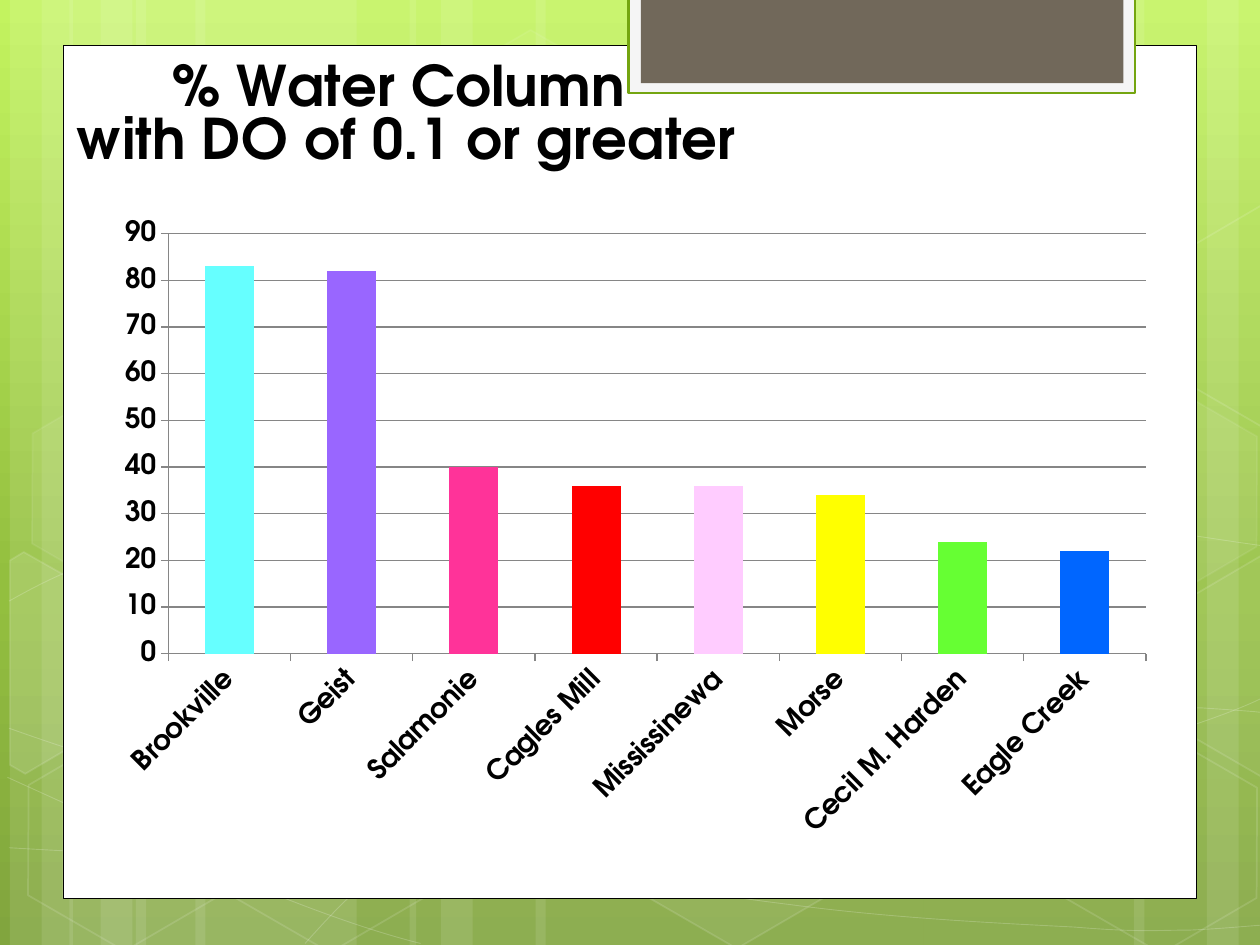
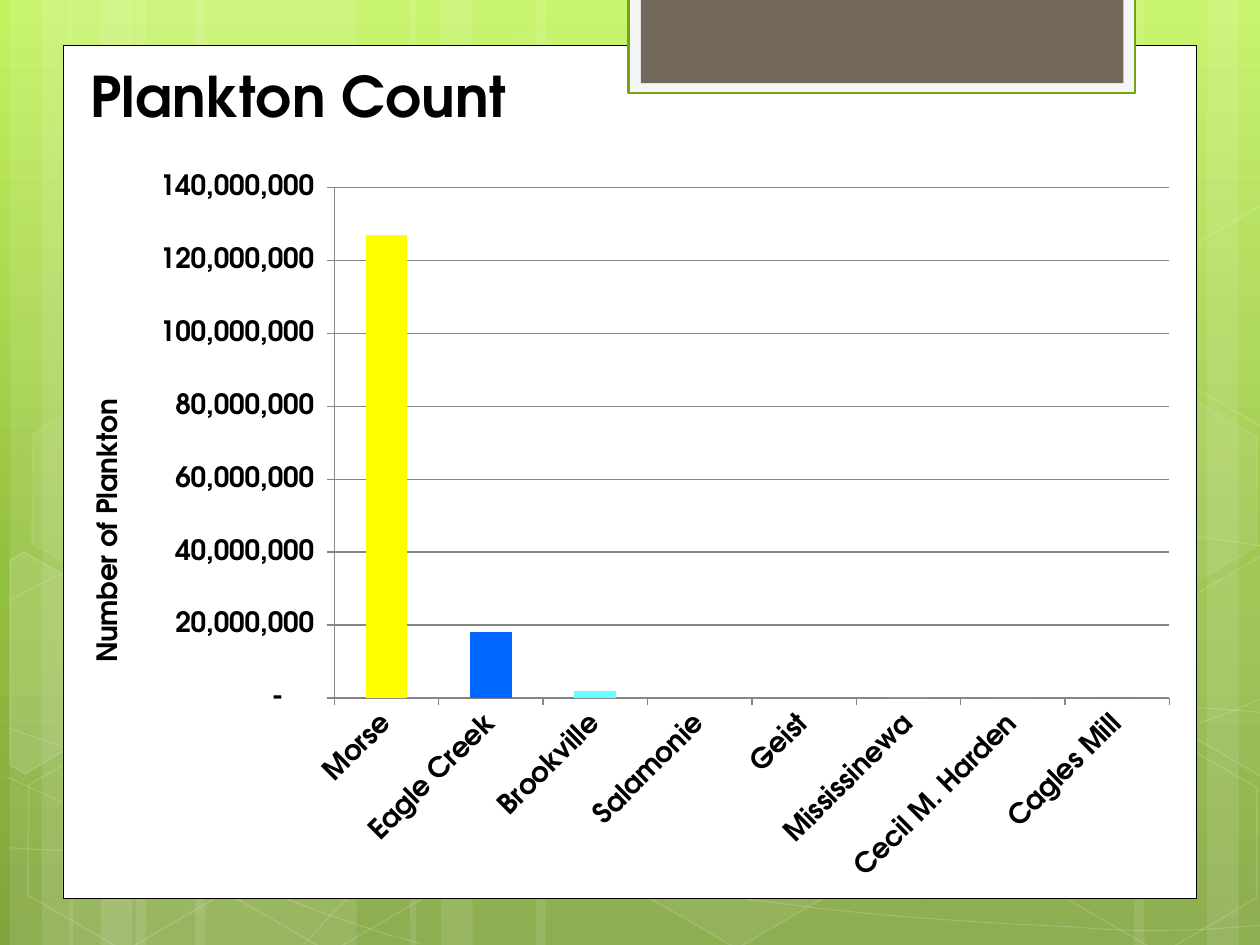
from copy import deepcopy

from lxml.etree import SubElement
from pptx import Presentation
from pptx.chart.data import CategoryChartData
from pptx.dml.color import RGBColor
from pptx.enum.chart import XL_CHART_TYPE, XL_TICK_MARK
from pptx.enum.shapes import MSO_SHAPE
from pptx.oxml import parse_xml
from pptx.oxml.ns import nsdecls, qn
from pptx.util import Cm, Pt

FONT = "TeX Gyre Adventor"
COLORS = {
    "white": "FFFFFF", "black": "000000", "grid": "868686", "series": "94C600",
    "frame": "F5F5F5", "frame_line": "74A510", "tab": "71685A",
}
BACKGROUND = [(0, "C3F35F"), (0.62, "93BF3F"), (1, "81A53E")]
LAKES = {
    "Brookville": "66FFFF", "Geist": "9966FF", "Salamonie": "FF3399",
    "Cagles Mill": "FF0000", "Mississinewa": "FFCCFF", "Morse": "FFFF00",
    "Cecil M. Harden": "66FF33", "Eagle Creek": "0066FF",
}
CHARTS = [
    {
        "title": "% Water Column \nwith DO of 0.1 or greater",
        "title_percent": (0.9, 1.2),
        "box": (1.27, 0.97, 22.86, 17.15),
        "plot_percent": (9.3, 21.8, 86.2, 49.4),
        "values": {
            "Brookville": 83, "Geist": 82, "Salamonie": 40, "Cagles Mill": 36,
            "Mississinewa": 36, "Morse": 34, "Cecil M. Harden": 24, "Eagle Creek": 22,
        },
        "scale": {"minimum_scale": 0, "maximum_scale": 90, "major_unit": 10},
        "format": "0",
    },
    {
        "title": "Plankton Count",
        "title_percent": (1.1, 1.2),
        "box": (1.37, 0.97, 22.66, 17.15),
        "plot_percent": (23.7, 16.4, 74.3, 60),
        "values": {
            "Morse": 127000000, "Eagle Creek": 18000000, "Brookville": 2000000,
            "Salamonie": 0, "Geist": 0, "Mississinewa": 0, "Cecil M. Harden": 0,
            "Cagles Mill": 0,
        },
        "scale": {"minimum_scale": 0, "maximum_scale": 140000000, "major_unit": 20000000},
        "format": '_(* #,##0_);_(* \\(#,##0\\);_(* "-"??_);_(@_)',
        "axis_title": "Number of Plankton ",
        "axis_title_percent": (1.8, 39.8),
    },
]

STRIPES = [
    (2.74, 4.45), (0.2, 1.27), (0.84, 2.11), (3.94, 4.45), (1.4, 1.27), (2.03, 2.11),
    (18.62, 4.45), (24.33, 1.27), (22.86, 2.11), (10.8, 7.82), (8.26, 1.27), (8.89, 2.11),
]
CURVES = [
    [(0.18, 17.09), (1.55, 17.17), (2.92, 17.25), (4.83, 17.22), (6.73, 17.2),
     (9.09, 17.15), (11.63, 16.89), (14.17, 16.64), (17.78, 16.15), (20.12, 15.67),
     (22.43, 15.19), (24.82, 14.43), (25.58, 14)],
    [(0.18, 12.12), (0.91, 11.71), (1.65, 11.33), (3.07, 10.95), (4.52, 10.57),
     (6.58, 10.01), (8.81, 9.83), (11.07, 9.65), (13.82, 9.63), (16.61, 9.83),
     (19.41, 10.03), (24.05, 10.82), (25.58, 11.02)],
    [(0.15, 15.67), (3.23, 17.07), (6.27, 18.47), (8.48, 19.02)],
    [(0.18, 14.68), (0.97, 14.96), (1.78, 15.24), (3.25, 15.65), (4.72, 16.03),
     (6.93, 16.66), (9.07, 17.09), (11.18, 17.53), (13.84, 17.98), (15.95, 18.24),
     (18.06, 18.52), (20.32, 18.62), (21.67, 18.69), (22.99, 18.8), (23.34, 18.75),
     (24, 18.75), (24.66, 18.72), (25.12, 18.67), (25.58, 18.64)],
    [(6.15, 19.02), (6.6, 18.52), (7.06, 18.01), (7.67, 17.55), (8.28, 17.09),
     (9.14, 16.59), (9.86, 16.23), (10.57, 15.88), (11, 15.72), (11.94, 15.47),
     (12.85, 15.21), (14.55, 14.86), (15.44, 14.68), (16.36, 14.5), (16.48, 14.5),
     (17.27, 14.45), (18.06, 14.38), (19.3, 14.3), (20.17, 14.27), (21.06, 14.25),
     (22.5, 14.27), (22.5, 14.27), (23.07, 14.27), (23.64, 14.27), (24.21, 14.27),
     (24.66, 14.3), (25.1, 14.33), (25.32, 14.35), (25.55, 14.38), (25.48, 14.35),
     (25.55, 14.38)],
]
HEXAGONS = [
    (8.48, 0.91, 4, 8), (12.62, 14.96, 6, 12), (0.28, 15.01, 0, 12), (0.36, 7.92, 7, 8),
    (4.42, 15.04, 0, 12), (19.13, 11.51, 10, 12), (21.18, 15.06, 0, 12),
    (21.18, 7.98, 7, 8),
]
CUT_HEXAGONS = [
    ([(0.2, 11.3), (0.48, 11.13), (2.44, 12.24), (2.41, 14.48), (0.51, 15.6),
      (0.2, 15.42)], 10),
    ([(23.52, 12.32), (25.43, 11.2), (25.63, 11.33), (25.63, 15.57), (25.45, 15.67),
      (23.52, 14.55)], 4),
    ([(23.52, 5.26), (25.43, 4.14), (25.65, 4.27), (25.63, 8.51), (25.45, 8.61),
      (23.52, 7.49)], 0),
]
PANELS = [
    ((1.27, 0.91, 22.86, 17.2), "white", "black", 0.5),
    ((12.67, -0.05, 10.21, 1.93), "frame", "frame_line", 1.25),
    ((12.92, -0.05, 9.73, 1.73), "tab", None, 0),
]


def rgb(name):
    return RGBColor.from_string(COLORS.get(name, name))


def style(sp, fill=None, line=None, width=0, fill_alpha=100, line_alpha=100):
    sp.shadow.inherit = False
    for fmt, color, alpha, where in (
        (sp.fill, fill, fill_alpha, "./p:spPr/a:solidFill/a:srgbClr"),
        (sp.line.fill, line, line_alpha, "./p:spPr/a:ln/a:solidFill/a:srgbClr"),
    ):
        if color is None or alpha == 0:
            fmt.background()
            continue
        fmt.solid()
        fmt.fore_color.rgb = rgb(color)
        if alpha < 100:
            SubElement(sp.element.xpath(where)[0], qn("a:alpha")).set("val", str(alpha * 1000))
    if line:
        sp.line.width = Pt(width)


def add_preset(shapes, kind, box, **look):
    sp = shapes.add_shape(kind, *map(Cm, box))
    style(sp, **look)
    return sp


def add_outline(shapes, points, close, **look):
    start, *rest = [(Cm(x), Cm(y)) for x, y in points]
    builder = shapes.build_freeform(*start)
    builder.add_line_segments(rest, close=close)
    sp = builder.convert_to_shape()
    style(sp, **look)
    return sp


def bend(sp):
    segments = sp.element.xpath(".//a:lnTo")
    outline = segments[0].getparent()
    for i in range(0, len(segments), 3):
        curve = SubElement(outline, qn("a:cubicBezTo"))
        for segment in segments[i:i + 3]:
            curve.append(segment[0])
            outline.remove(segment)


def draw_backdrop(shapes):
    for left, width in STRIPES:
        add_preset(shapes, MSO_SHAPE.RECTANGLE, (left, 0, width, 19.05),
                   fill="white", fill_alpha=10)
    for nodes in CURVES:
        bend(add_outline(shapes, nodes, False, line="white", width=0.5, line_alpha=20))
    for left, top, fill_alpha, line_alpha in HEXAGONS:
        sp = add_preset(shapes, MSO_SHAPE.HEXAGON, (left, top, 4.45, 3.86), fill="white",
                        fill_alpha=fill_alpha, line="white", width=1, line_alpha=line_alpha)
        sp.rotation = 30
        sp.adjustments[0] = 0.285
    for points, alpha in CUT_HEXAGONS:
        add_outline(shapes, points, True, fill="white", fill_alpha=alpha,
                    line="white", width=1, line_alpha=12)
    for box, fill, line, width in PANELS:
        add_preset(shapes, MSO_SHAPE.RECTANGLE, box, fill=fill, line=line, width=width)


def set_background(layout):
    fill = layout.background.fill
    fill.gradient()
    fill.gradient_angle = 270
    stops = layout.element.xpath(".//p:bg//a:gsLst")[0]
    stops.insert(1, deepcopy(stops[0]))
    for stop, (position, color) in zip(fill.gradient_stops, BACKGROUND):
        stop.position = position
        stop.color.rgb = rgb(color)


def set_layout(parent, index, percents, inner=False):
    for old in parent.findall(qn("c:layout")):
        parent.remove(old)
    layout = parse_xml(f"<c:layout {nsdecls('c')}><c:manualLayout/></c:layout>")
    values = [("layoutTarget", "inner")] if inner else []
    values += [("xMode", "edge"), ("yMode", "edge")]
    values += [(tag, round(percent / 100, 3)) for tag, percent in zip("xywh", percents)]
    for tag, value in values:
        SubElement(layout[0], qn(f"c:{tag}")).set("val", str(value))
    parent.insert(index, layout)


def set_font(font, size):
    values = {"name": FONT, "size": Pt(size), "bold": True}
    for name, value in values.items():
        setattr(font, name, value)
    font.color.rgb = rgb("black")


def write_title(title, text, size):
    title.text_frame.text = text
    for p in title.text_frame.paragraphs:
        set_font(p.font, size)
        for r in p.runs:
            set_font(r.font, size)


def add_lake_chart(slide, content):
    data = CategoryChartData(number_format=content["format"])
    data.categories = list(content["values"])
    data.add_series("Series 1", content["values"].values())
    chart = slide.shapes.add_chart(
        XL_CHART_TYPE.COLUMN_CLUSTERED, *map(Cm, content["box"]), data).chart
    chart.has_legend = False
    set_font(chart.font, 10)
    chart.has_title = True
    write_title(chart.chart_title, content["title"], 32)
    find = chart.element.xpath
    set_layout(find("./c:chart/c:title")[0], 1, content["title_percent"])
    set_layout(find(".//c:plotArea")[0], 0, content["plot_percent"], inner=True)

    plot = chart.plots[0]
    plot.gap_width = 150
    plot.vary_by_categories = False
    series = plot.series[0]
    series.format.fill.solid()
    series.format.fill.fore_color.rgb = rgb("series")
    for i, lake in enumerate(content["values"]):
        fill = series.points[i].format.fill
        fill.solid()
        fill.fore_color.rgb = rgb(LAKES[lake])

    axis = chart.value_axis
    for name, value in content["scale"].items():
        setattr(axis, name, value)
    axis.has_major_gridlines = True
    axis.tick_labels.number_format = content["format"]
    axis.tick_labels.number_format_is_linked = False
    for ax in (axis, chart.category_axis):
        ax.major_tick_mark = XL_TICK_MARK.OUTSIDE
        set_font(ax.tick_labels.font, 16)
    for fmt in (axis.format, chart.category_axis.format, axis.major_gridlines.format):
        fmt.line.color.rgb = rgb("grid")
        fmt.line.width = Pt(0.75)
    find(".//c:catAx/c:txPr/a:bodyPr")[0].set("rot", "-2700000")
    if "axis_title" in content:
        write_title(axis.axis_title, content["axis_title"], 16)
        set_layout(find(".//c:valAx/c:title")[0], 1, content["axis_title_percent"])
        body = find(".//c:valAx/c:title//a:bodyPr")[0]
        body.set("rot", "-5400000")
        body.set("vert", "horz")


def main():
    prs = Presentation()
    prs.slide_width, prs.slide_height = Cm(25.4), Cm(19.05)
    layout = prs.slide_layouts[6]
    for ph in list(layout.placeholders):
        layout.shapes.element.remove(ph.element)
    set_background(layout)
    slides = [prs.slides.add_slide(layout) for _ in CHARTS]
    draw_backdrop(slides[0].shapes)
    for sp in list(slides[0].shapes):
        layout.shapes.element.append(sp.element)
    for slide, content in zip(slides, CHARTS):
        add_lake_chart(slide, content)
    prs.save("out.pptx")


if __name__ == "__main__":
    main()
